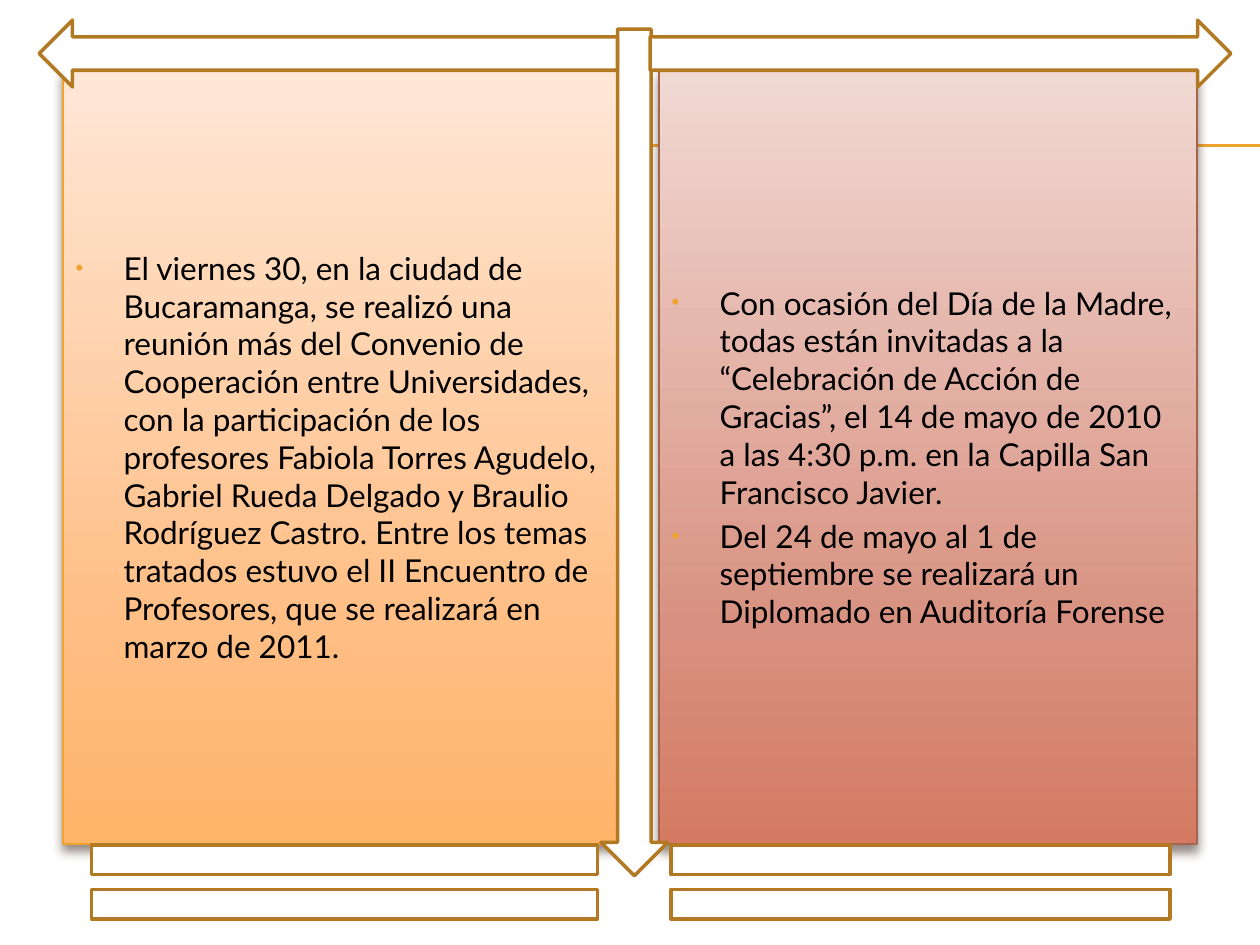
"""Build a news slide with two text panels, framed by arrows and double bars."""
from pptx import Presentation
from pptx.dml.color import RGBColor as Rgb
from pptx.enum.shapes import MSO_CONNECTOR as Conn, MSO_SHAPE as Form
from pptx.enum.text import MSO_ANCHOR as Anchor, MSO_AUTO_SIZE as Auto
from pptx.oxml import parse_xml
from pptx.oxml.ns import nsdecls, qn
from pptx.util import Pt

HUES = {
    "gold": "F0A22E", "rust": "A5644E", "edge": "B27822",
    "shade": "4E3B30", "white": "FFFFFF", "ink": "000000",
}
WARM = ("FFE7D7", "FFBE84", "FFB468")
ROSE = ("F1D9D4", "D89180", "D47A62")
STOPS = (0, 72, 100)

PAST = [
    "El viernes 30, en la ciudad de Bucaramanga, se realizó una reunión más "
    "del Convenio de Cooperación entre Universidades, con la participación de "
    "los profesores Fabiola Torres Agudelo, Gabriel Rueda Delgado y Braulio "
    "Rodríguez Castro. Entre los temas tratados estuvo el II Encuentro de "
    "Profesores, que se realizará en marzo de 2011.",
]
NEXT = [
    "Con ocasión del Día de la Madre, todas están invitadas a la “Celebración "
    "de Acción de Gracias”, el 14 de mayo de 2010 a las 4:30 p.m. en la "
    "Capilla San Francisco Javier.",
    "Del 24 de mayo al 1 de septiembre se realizará un Diplomado en "
    "Auditoría Forense",
]


def node(xml):
    """Parse one drawing element."""
    tag, rest = xml[1:].split(" ", 1)
    return parse_xml(f"<{tag} {nsdecls('a')} {rest}")


class Page:
    """Hold the style and the current slide."""

    font, size, indent, gap = "Lato", 18, 27.4, 3.6

    def __init__(self, slide):
        self.slide = slide
        self.shapes = slide.shapes

    def hue(self, name):
        return Rgb.from_string(HUES[name])

    def place(self, shape, box):
        shape.left, shape.top, shape.width, shape.height = map(Pt, box)

    def edge(self, shape, name, width):
        shape.line.color.rgb = self.hue(name)
        shape.line.width = Pt(width)

    def rule(self, left, top, right):
        line = self.shapes.add_connector(
            Conn.STRAIGHT, Pt(left), Pt(top), Pt(right), Pt(top))
        self.edge(line, "gold", 0.75)
        props = line._element.spPr
        props.append(node("<a:effectLst />"))
        self.shapes._spTree.insert(2, line._element)

    def panel(self, spot, box, tones, edge, lines):
        shape = self.shapes.placeholders[spot]
        self.place(shape, box)
        props = shape._element.spPr
        stops = "".join(
            f'<a:gs pos="{pos * 1000}"><a:srgbClr val="{tone}"/></a:gs>'
            for pos, tone in zip(STOPS, tones))
        props.append(node(
            f'<a:gradFill rotWithShape="1"><a:gsLst>{stops}</a:gsLst>'
            '<a:lin ang="5400000" scaled="0"/></a:gradFill>'))
        self.edge(shape, edge, 0.79)
        shape.shadow.inherit = False
        props.find(qn("a:effectLst")).append(node(
            f'<a:outerShdw blurRad="{Pt(6)}" dist="{Pt(4)}" dir="5400000" '
            f'rotWithShape="0"><a:srgbClr val="{HUES["shade"]}">'
            '<a:alpha val="60000"/></a:srgbClr></a:outerShdw>'))
        self.list(shape.text_frame, lines)

    def list(self, frame, lines):
        frame.text = "\n".join(lines)
        frame.word_wrap = True
        frame.auto_size = Auto.NONE
        frame.vertical_anchor = Anchor.MIDDLE
        for rank, para in enumerate(frame.paragraphs):
            self.bullet(para)
            para.space_before = Pt(self.gap if rank else 0)
            for run in para.runs:
                run.font.name = self.font
                run.font.size = Pt(self.size)
                run.font.color.rgb = self.hue("ink")

    def bullet(self, para):
        props = para._p.get_or_add_pPr()
        props.set("marL", str(Pt(self.indent)))
        props.set("indent", str(-Pt(self.indent)))
        for xml in (
            f'<a:buClr ><a:srgbClr val="{HUES["gold"]}"/></a:buClr>',
            '<a:buSzPct val="70000"/>',
            '<a:buChar char="•"/>',
        ):
            props.append(node(xml))

    def mark(self, form, box):
        shape = self.shapes.add_shape(form, *map(Pt, box))
        shape.shadow.inherit = False
        shape.fill.solid()
        shape.fill.fore_color.rgb = self.hue("white")
        self.edge(shape, "edge", 2)


def main():
    deck = Presentation()
    deck.slide_width, deck.slide_height = Pt(720), Pt(540)
    page = Page(deck.slides.add_slide(deck.slide_layouts[3]))
    title = page.shapes.title._element
    title.getparent().remove(title)

    for top in (83.5, 82.8):
        page.rule(40.3, top, 720)
    page.panel(1, (36, 39.6, 318.2, 442.8), WARM, "gold", PAST)
    page.panel(2, (376.6, 39.6, 307.4, 442.8), ROSE, "rust", NEXT)
    for form, box in (
        (Form.DOWN_ARROW, (343.4, 16.6, 38.2, 483.8)),
        (Form.RIGHT_ARROW, (371.5, 11.5, 331.9, 38.2)),
        (Form.LEFT_ARROW, (22.3, 11.5, 330.5, 38.2)),
        (Form.MATH_EQUAL, (0, 468, 393.8, 72)),
        (Form.MATH_EQUAL, (331.9, 468, 388.1, 72)),
    ):
        page.mark(form, box)
    deck.save("out.pptx")


if __name__ == "__main__":
    main()
